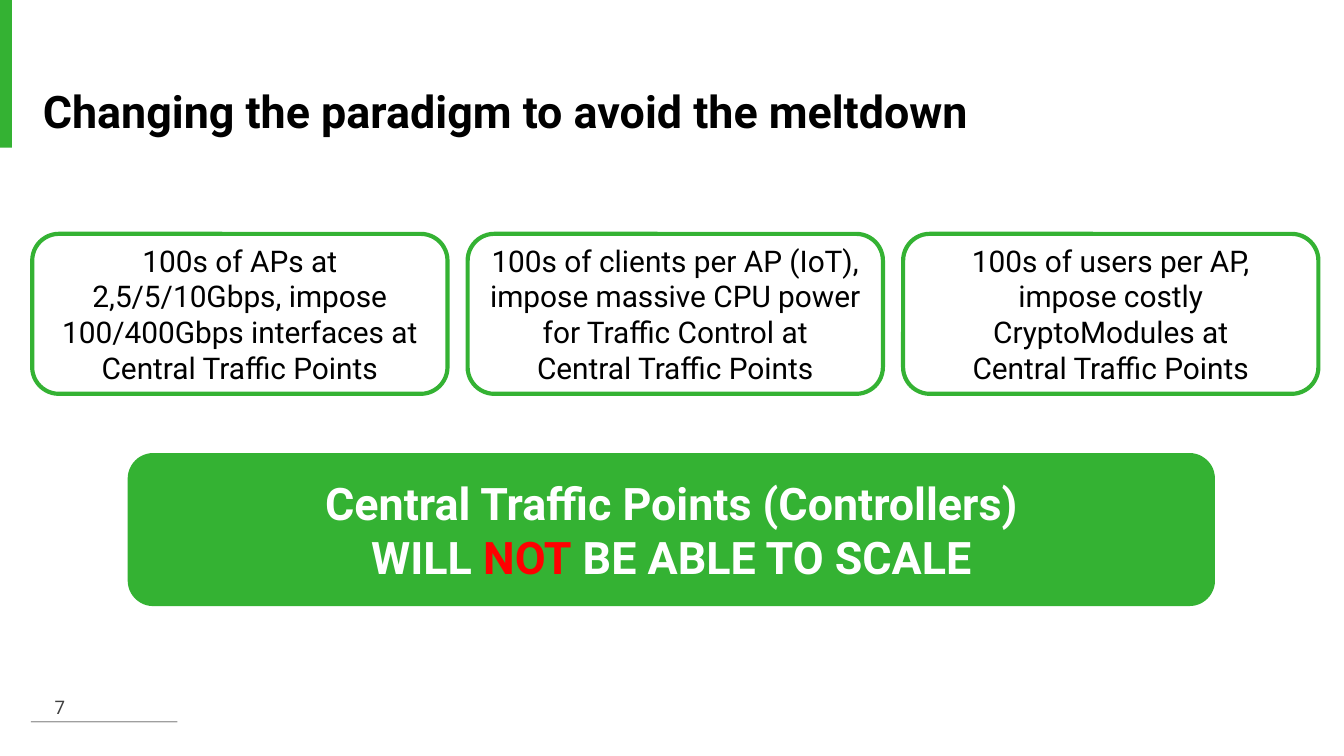
from lxml import etree
from pptx import Presentation
from pptx.dml.color import RGBColor
from pptx.enum.shapes import MSO_CONNECTOR, MSO_SHAPE
from pptx.enum.text import MSO_ANCHOR, MSO_AUTO_SIZE, PP_ALIGN
from pptx.oxml.ns import qn
from pptx.util import Pt

RECTANGLE = MSO_SHAPE.RECTANGLE
ROUNDED = MSO_SHAPE.ROUNDED_RECTANGLE
STRAIGHT = MSO_CONNECTOR.STRAIGHT
MIDDLE, BOTTOM = MSO_ANCHOR.MIDDLE, MSO_ANCHOR.BOTTOM
LEFT, CENTER = PP_ALIGN.LEFT, PP_ALIGN.CENTER
NO_AUTOFIT = MSO_AUTO_SIZE.NONE

GREEN = RGBColor(0x34, 0xB2, 0x33)
WHITE = RGBColor(0xFF, 0xFF, 0xFF)
BLACK = RGBColor(0x00, 0x00, 0x00)
RED = RGBColor(0xFF, 0x00, 0x00)
GRAY = RGBColor(0x40, 0x40, 0x40)
FONT = "Roboto"
TITLE_ONLY = 5

# Each reason: side inset in points, then its paragraphs
REASONS = [
    (2.88, ["100s of APs at 2,5/5/10Gbps, impose 100/400Gbps interfaces at "
            "Central Traffic Points"]),
    (0, ["100s of clients per AP (IoT), impose massive CPU power "
         "for Traffic Control at", "Central Traffic Points"]),
    (7.2, ["100s of users per AP, impose costly CryptoModules at",
           "Central Traffic Points"]),
]
CONCLUSION = [
    [("Central Traffic Points (Controllers)", WHITE)],
    [("WILL ", WHITE), ("NOT", RED), (" BE ABLE TO SCALE", WHITE)],
]


def write_text(shape, paragraphs, size, bold=False, align=CENTER,
               anchor=MIDDLE, side_inset=7.2, end_inset=3.6):
    """Fill a shape with paragraphs, each a list of (text, colour) runs."""
    frame = shape.text_frame
    frame.word_wrap = True
    frame.auto_size = NO_AUTOFIT
    frame.vertical_anchor = anchor
    frame.margin_left = frame.margin_right = Pt(side_inset)
    frame.margin_top = frame.margin_bottom = Pt(end_inset)
    for index, runs in enumerate(paragraphs):
        paragraph = frame.add_paragraph() if index else frame.paragraphs[0]
        paragraph.alignment = align
        paragraph.space_before = Pt(0)
        for text, color in runs:
            run = paragraph.add_run()
            run.text = text
            run.font.name = FONT
            run.font.size = Pt(size)
            run.font.bold = bold
            run.font.color.rgb = color


def add_box(slide, kind, left, top, width, height, fill, outline=None):
    shape = slide.shapes.add_shape(
        kind, Pt(left), Pt(top), Pt(width), Pt(height))
    shape.shadow.inherit = False
    shape.fill.solid()
    shape.fill.fore_color.rgb = fill
    if outline is None:
        shape.line.fill.background()
    else:
        shape.line.color.rgb = outline
        shape.line.width = Pt(2.25)
    return shape


def add_header(slide, left, top, width, height):
    # Accent bar at the slide edge
    add_box(slide, RECTANGLE, 0, 0, 6.4, 79.2, GREEN)
    title = slide.shapes.title
    title.left, title.top = Pt(left), Pt(top)
    title.width, title.height = Pt(width), Pt(height)
    write_text(title, [[("Changing the paradigm to avoid the meltdown", BLACK)]],
               24, bold=True, align=LEFT, anchor=BOTTOM,
               side_inset=5.63, end_inset=2.81)


def add_reasons(slide, left, top, width, height, gap=10.8):
    box_width = (width - gap * (len(REASONS) - 1)) / len(REASONS)
    for index, (side_inset, texts) in enumerate(REASONS):
        box = add_box(slide, ROUNDED, left + index * (box_width + gap), top,
                      box_width, height, WHITE, GREEN)
        write_text(box, [[(text, BLACK)] for text in texts], 16,
                   side_inset=side_inset)


def add_conclusion(slide, left, top, width, height):
    banner = add_box(slide, ROUNDED, left, top, width, height, GREEN)
    write_text(banner, CONCLUSION, 24, bold=True)


def add_footer(slide, left, top, width, height):
    # Slide number
    number = slide.shapes.add_textbox(Pt(left), Pt(top), Pt(29.5), Pt(height))
    write_text(number, [[("7", GRAY)]], 10, anchor=BOTTOM,
               side_inset=5.63, end_inset=2.81)
    # Half-transparent rule below it
    rule_top = Pt(top + height - 0.7)
    rule = slide.shapes.add_connector(
        STRAIGHT, Pt(left + width), rule_top, Pt(left - 0.7), rule_top)
    rule.line.color.rgb = GRAY
    rule.line.width = Pt(0.75)
    properties = rule._element.spPr
    color = properties.find(".//" + qn("a:srgbClr"))
    etree.SubElement(color, qn("a:alpha"), val="50000")
    etree.SubElement(properties, qn("a:effectLst"))


def main():
    presentation = Presentation()
    presentation.slide_width, presentation.slide_height = Pt(720), Pt(405)
    slide = presentation.slides.add_slide(
        presentation.slide_layouts[TITLE_ONLY])
    add_header(slide, 17.3, 13.7, 685, 62.6)
    add_reasons(slide, 17.3, 125.3, 689, 85.7)
    add_conclusion(slide, 68.4, 242.7, 582.5, 82)
    add_footer(slide, 17.3, 373, 77.7, 14.4)
    presentation.save("out.pptx")


if __name__ == "__main__":
    main()
